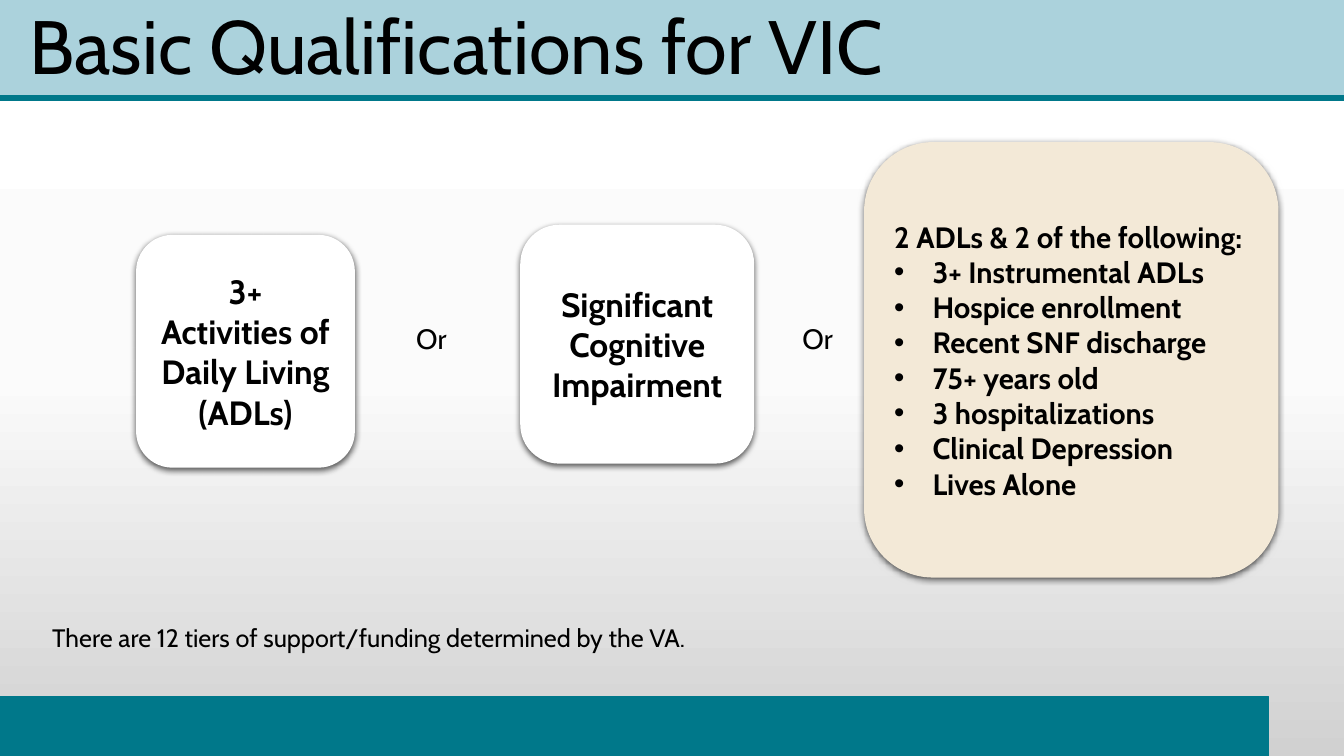
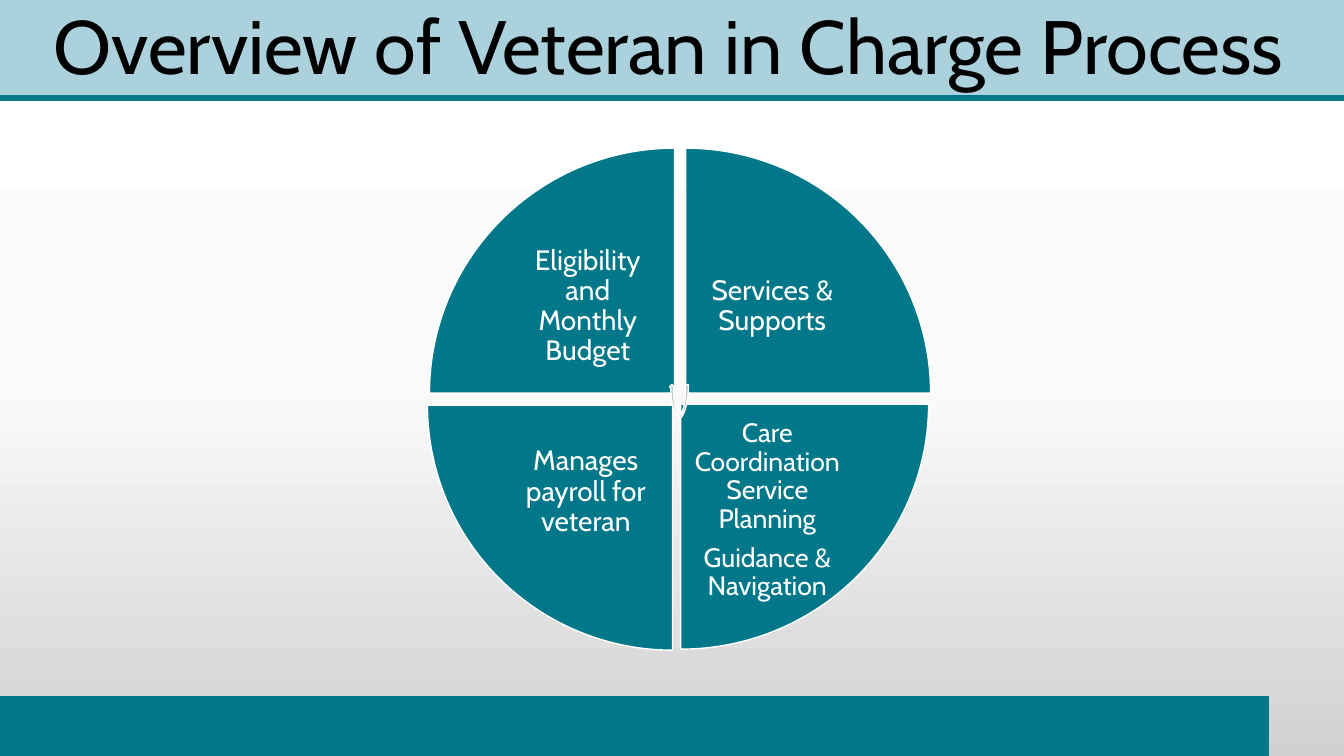
from copy import deepcopy

from pptx import Presentation
from pptx.dml.color import RGBColor
from pptx.enum.shapes import MSO_SHAPE
from pptx.enum.text import MSO_ANCHOR, MSO_AUTO_SIZE, PP_ALIGN
from pptx.oxml import parse_xml
from pptx.oxml.ns import nsdecls, qn
from pptx.util import Inches, Pt

FONT = "Cabin"
TEAL, PALE_BLUE, CREAM = "00788A", "ABD2DC", "F3E9D7"
WHITE, BLACK, GREY = "FFFFFF", "000000", "ABBEC4"
BACKGROUND_STOPS = [(0, "FFFFFF"), (0.5, "FBFBFB"), (1, "D1D1D1")]
BANDS = [
    (0, 6.91, 12.58, 0.59, TEAL),
    (0, 0, 13.33, 0.94, PALE_BLUE),
    (0, 0.95, 13.33, 0.05, TEAL),
]
WEDGE_TEXT_SIDE = 1.72


def color(hex_code):
    return RGBColor.from_string(hex_code)


def style_text(para, size, hex_code, bold=False):
    for span in para.runs:
        span.font.name = FONT
        span.font.size = Pt(size)
        span.font.bold = bold
        span.font.color.rgb = color(hex_code)


def add_bullet(para):
    properties = para._p.get_or_add_pPr()
    properties.set("marL", str(Inches(0.38)))
    properties.set("indent", str(Inches(-0.38)))
    properties.append(parse_xml(f'<a:buFont {nsdecls("a")} typeface="Arial"/>'))
    properties.append(parse_xml(f'<a:buChar {nsdecls("a")} char="•"/>'))


def add_figure(slide, kind, place, fill, line=None):
    figure = slide.shapes.add_shape(kind, *map(Inches, place))
    figure.shadow.inherit = False
    figure.fill.solid()
    figure.fill.fore_color.rgb = color(fill)
    if line:
        figure.line.color.rgb = color(line)
        figure.line.width = Pt(1)
    else:
        figure.line.fill.background()
    return figure


def fill_frame(frame, lines, size, hex_code, align, bold=False):
    frame.word_wrap = True
    frame.text = "\n".join(lines)
    for para in frame.paragraphs:
        para.alignment = align
        style_text(para, size, hex_code, bold)


def add_label(slide, place, lines, size, hex_code=BLACK, align=PP_ALIGN.LEFT):
    label = slide.shapes.add_textbox(*map(Inches, place))
    fill_frame(label.text_frame, lines, size, hex_code, align)
    return label.text_frame


def add_card(slide, place, lines, size, fill=WHITE, align=PP_ALIGN.CENTER):
    card = add_figure(slide, MSO_SHAPE.ROUNDED_RECTANGLE, place, fill)
    effects = card._element.spPr.find(qn("a:effectLst"))
    effects.append(parse_xml(
        f'<a:outerShdw {nsdecls("a")} blurRad="{Pt(4.5)}" dist="{Pt(1.5)}" '
        f'dir="5400000" algn="ctr" rotWithShape="0"><a:srgbClr val="{BLACK}">'
        '<a:alpha val="63000"/></a:srgbClr></a:outerShdw>'))
    card.text_frame.vertical_anchor = MSO_ANCHOR.MIDDLE
    fill_frame(card.text_frame, lines, size, BLACK, align, bold=True)
    return card.text_frame


def add_wedge(slide, place, rotation, lines, size,
              anchor=MSO_ANCHOR.MIDDLE, side_margin=0.15):
    wedge = add_figure(slide, MSO_SHAPE.PIE_WEDGE, place, TEAL, WHITE)
    wedge.rotation = rotation
    # The text sits in the corner nearest to the centre of the circle
    left, top, width, height = place
    if rotation in (0, 270):
        left += width - WEDGE_TEXT_SIDE
    if rotation in (0, 90):
        top += height - WEDGE_TEXT_SIDE
    frame = add_label(slide, (left, top, WEDGE_TEXT_SIDE, WEDGE_TEXT_SIDE),
                      lines, size, WHITE, PP_ALIGN.CENTER)
    frame.vertical_anchor = anchor
    frame.margin_left = frame.margin_right = Inches(side_margin)
    frame.margin_top = frame.margin_bottom = Inches(0.15)
    for para in frame.paragraphs:
        para.line_spacing = 0.9
        para.space_after = Pt(7)


def add_center_arrow(slide, place, rotation, flips):
    arrow = add_figure(slide, MSO_SHAPE.CIRCULAR_ARROW, place, GREY, WHITE)
    arrow.rotation = rotation
    for flip in flips:
        arrow._element.spPr.find(qn("a:xfrm")).set(flip, "1")


def set_background(master):
    fill = master.background.fill
    fill.gradient()
    fill.gradient_angle = 270
    stop_list = master.element.find(".//" + qn("a:gsLst"))
    stop_list.insert(1, deepcopy(stop_list[0]))
    for stop, (position, hex_code) in zip(fill.gradient_stops, BACKGROUND_STOPS):
        stop.position = position
        stop.color.rgb = color(hex_code)


def move_bands_to_layout(slide):
    for *place, fill in BANDS:
        band = add_figure(slide, MSO_SHAPE.RECTANGLE, place, fill, fill)
        slide.slide_layout.shapes.element.append(band.element)


def add_titled_page(deck, text, left, width):
    page = deck.slides.add_slide(deck.slide_layouts[5])
    title = page.shapes.title
    title.left, title.top = Inches(left), Inches(0)
    title.width, title.height = Inches(width), Inches(0.99)
    frame = title.text_frame
    frame.auto_size = MSO_AUTO_SIZE.NONE
    frame.vertical_anchor = MSO_ANCHOR.MIDDLE
    fill_frame(frame, [text], 54, BLACK, PP_ALIGN.LEFT)
    frame.paragraphs[0].line_spacing = 0.9
    return page


def build_qualifications(deck):
    page = add_titled_page(deck, "Basic Qualifications for VIC", 0.19, 13)
    move_bands_to_layout(page)

    # Three alternatives
    add_card(page, (1.35, 2.33, 2.17, 2.31),
             ["3+", "Activities of Daily Living (ADLs)"], 24)
    add_card(page, (5.16, 2.23, 2.32, 2.37),
             ["Significant Cognitive Impairment"], 24)
    criteria = add_card(page, (8.57, 1.41, 4.11, 4.32), [
        "2 ADLs & 2 of the following:",
        "3+ Instrumental ADLs",
        "Hospice enrollment",
        "Recent SNF discharge",
        "75+ years old",
        "3 hospitalizations",
        "Clinical Depression",
        "Lives Alone",
    ], 21, CREAM, PP_ALIGN.LEFT)
    for para in criteria.paragraphs[1:]:
        add_bullet(para)
    for left, width in [(4.03, 0.75), (7.86, 0.62)]:
        add_label(page, (left, 3.14, width, 0.44), ["Or"], 20)

    # Closing note
    add_label(page, (0.42, 6.12, 6.96, 0.4),
              ["There are 12 tiers of support/funding determined by the VA."], 18)


def build_process(deck):
    page = add_titled_page(
        deck, "Overview of Veteran in Charge Process", 0.43, 12.7)

    # Four quarters of the circle, clockwise
    add_wedge(page, (4.26, 1.47, 2.43, 2.43), 0,
              ["Eligibility and Monthly Budget"], 20)
    add_wedge(page, (6.8, 1.47, 2.43, 2.43), 90, ["Services & Supports"], 20)
    add_wedge(page, (6.75, 4.01, 2.46, 2.43), 180,
              ["Care Coordination Service Planning", "Guidance & Navigation"],
              19, MSO_ANCHOR.TOP, side_margin=0.1)
    add_wedge(page, (4.24, 4.02, 2.43, 2.43), 270,
              ["Manages payroll for veteran"], 20)

    # Small arrows at the centre
    add_center_arrow(page, (6.64, 3.48, 0.2, 0.67), 0, ["flipH", "flipV"])
    add_center_arrow(page, (6.71, 4.04, 0.07, 0.11), 180, ["flipH"])


def main():
    deck = Presentation()
    deck.slide_width, deck.slide_height = Inches(13.33), Inches(7.5)
    set_background(deck.slide_master)
    build_qualifications(deck)
    build_process(deck)
    deck.save("out.pptx")


if __name__ == "__main__":
    main()
